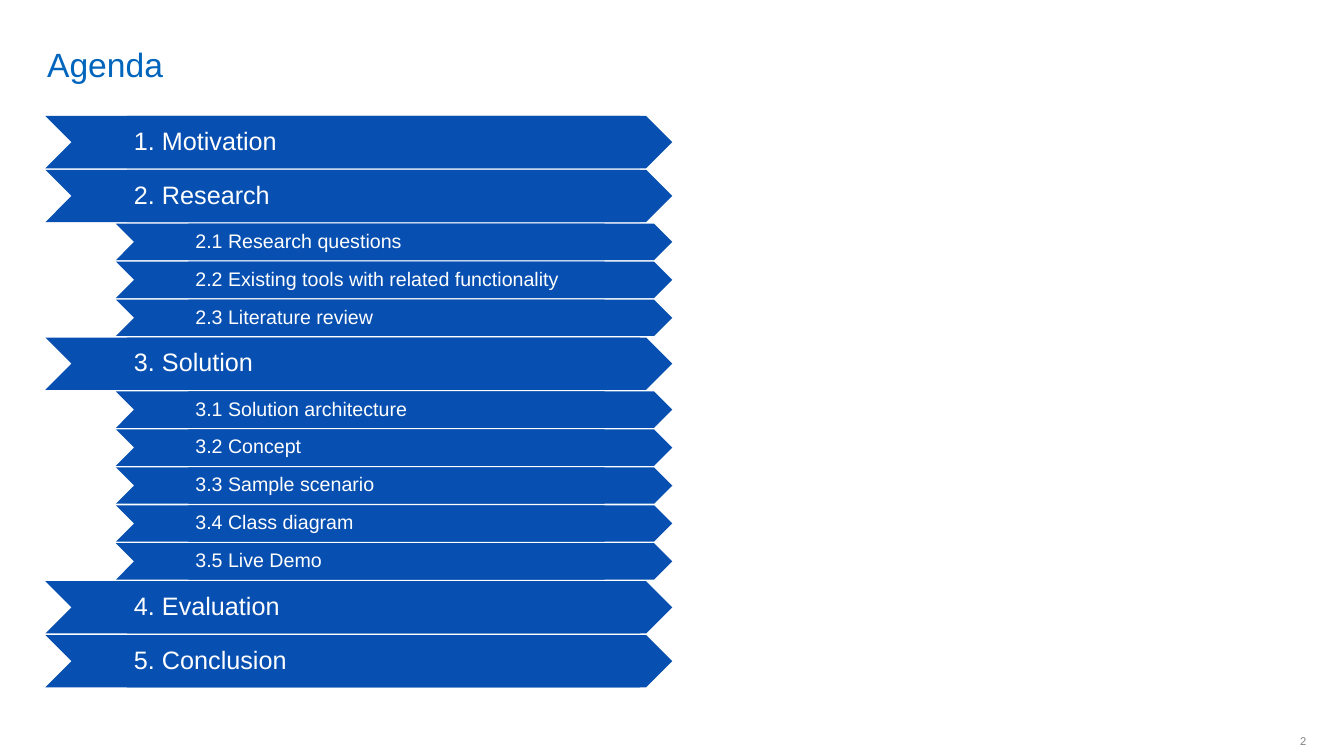
import pptx
import pptx.util
import pptx.dml.color
import pptx.enum.shapes
import pptx.enum.text

Pt = pptx.util.Pt
SHAPE = pptx.enum.shapes.MSO_SHAPE
ALIGN = pptx.enum.text.PP_ALIGN
ANCHOR = pptx.enum.text.MSO_ANCHOR

TITLE = "Agenda"
PAGE_NUMBER = "2"
AGENDA = [
    ("1. Motivation", []),
    ("2. Research", [
        "2.1 Research questions",
        "2.2 Existing tools with related functionality",
        "2.3 Literature review",
    ]),
    ("3. Solution", [
        "3.1 Solution architecture",
        "3.2 Concept",
        "3.3 Sample scenario",
        "3.4 Class diagram",
        "3.5 Live Demo",
    ]),
    ("4. Evaluation", []),
    ("5. Conclusion", []),
]
COLORS = {"title": "0065BD", "bar": "074FB0", "label": "FFFFFF", "number": "808080"}
CHAPTER = {"left": 32.4, "height": 37.4, "label_left": 90.7, "label_width": 366.5, "size": 18}
SECTION = {"left": 82.8, "height": 26, "label_left": 134.6, "label_width": 297.4, "size": 14}
BAR_RIGHT = 480.2
FIRST_TOP = 82.8
GAP = 1.1


def color(name):
    return pptx.dml.color.RGBColor.from_string(COLORS[name])


def write(box, text, size, ink, anchor, insets, align=ALIGN.LEFT):
    frame = box.text_frame
    frame.word_wrap = True
    frame.vertical_anchor = anchor
    frame.margin_left, frame.margin_top, frame.margin_right, frame.margin_bottom = map(Pt, insets)
    para = frame.paragraphs[0]
    para.text = text
    para.alignment = align
    para.font.name = "Arial"
    para.font.size = Pt(size)
    para.font.color.rgb = color(ink)
    return para


def add_bar(group, kind, left, top, width, height):
    bar = group.shapes.add_shape(kind, Pt(left), Pt(top), Pt(width), Pt(height))
    bar.shadow.inherit = False
    bar.fill.solid()
    bar.fill.fore_color.rgb = color("bar")
    bar.line.fill.background()
    return bar


def add_entry(page, text, level, top):
    group = page.shapes.add_group_shape()
    add_bar(group, SHAPE.CHEVRON, level["left"], top, BAR_RIGHT - level["left"], level["height"])
    label = add_bar(group, SHAPE.RECTANGLE, level["label_left"], top,
                    level["label_width"], level["height"])
    para = write(label, text, level["size"], "label", ANCHOR.MIDDLE, (5, 3.6, 1.4, 3.6))
    para.line_spacing = 0.9
    return top + level["height"] + GAP


def main():
    deck = pptx.Presentation()
    deck.slide_width, deck.slide_height = Pt(960), Pt(540)
    page = deck.slides.add_slide(deck.slide_layouts[6])

    title = page.shapes.add_textbox(Pt(26.6), Pt(3.6), Pt(833.8), Pt(56.9))
    write(title, TITLE, 24, "title", ANCHOR.BOTTOM, (7.2, 0, 7.2, 0))
    number = page.shapes.add_textbox(Pt(907.2), Pt(517.7), Pt(25.9), Pt(23))
    write(number, PAGE_NUMBER, 8, "number", ANCHOR.MIDDLE, (7.2, 3.6, 0, 3.6), ALIGN.RIGHT)

    top = FIRST_TOP
    for chapter, sections in AGENDA:
        top = add_entry(page, chapter, CHAPTER, top)
        for section in sections:
            top = add_entry(page, section, SECTION, top)

    deck.save("out.pptx")


if __name__ == "__main__":
    main()
